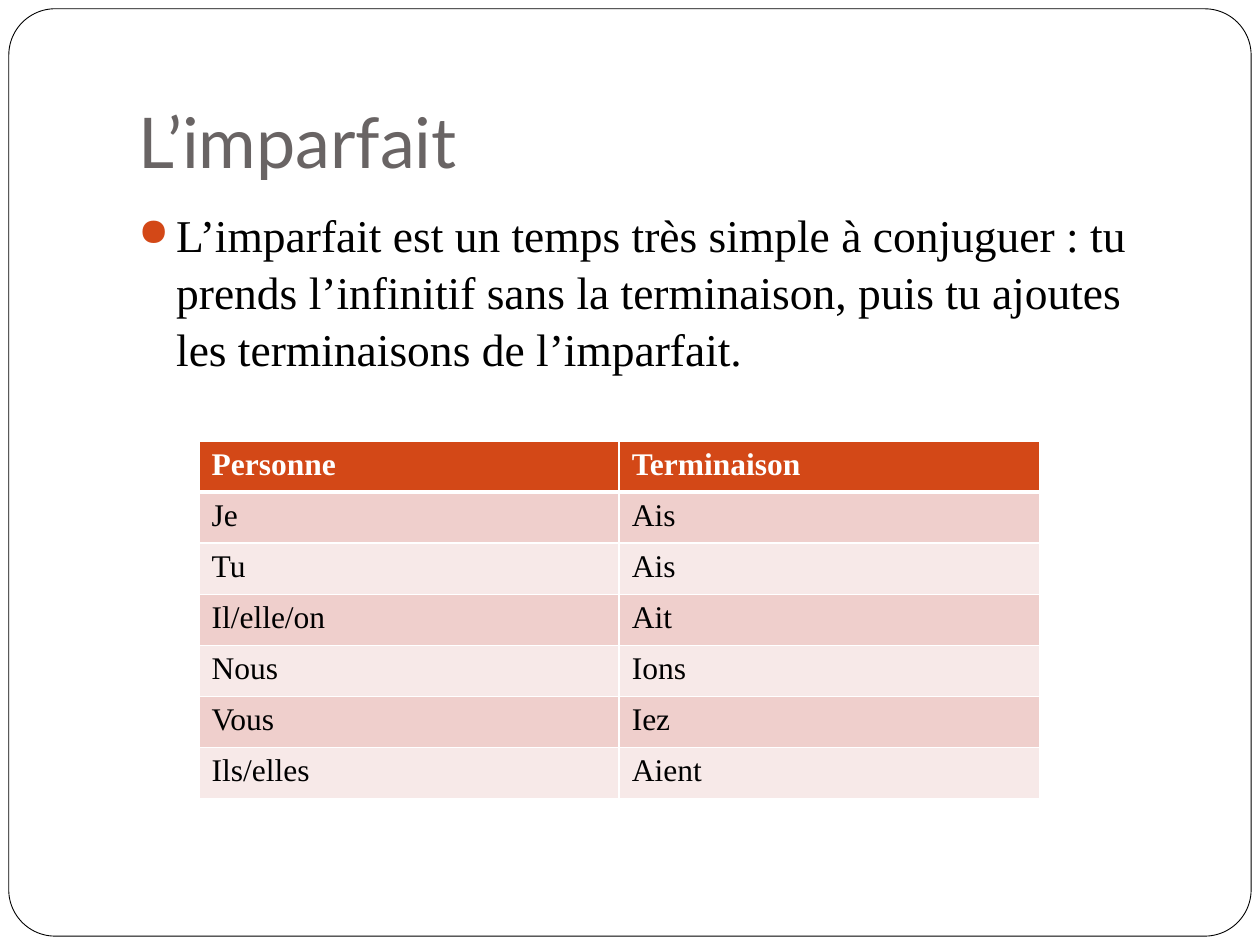
from lxml import etree
from pptx import Presentation, util as u
from pptx.dml.color import RGBColor
from pptx.enum import shapes, text
from pptx.oxml.ns import qn

WIDTH, HEIGHT = 10, 7.5
SERIF = "Times New Roman"
ACCENT, BLACK, WHITE = "D34817", "000000", "FFFFFF"
BANDS = ("EFCFCC", "F7E9E8")
ENDINGS = [
    ("Personne", "Terminaison"),
    ("Je", "Ais"),
    ("Tu", "Ais"),
    ("Il/elle/on", "Ait"),
    ("Nous", "Ions"),
    ("Vous", "Iez"),
    ("Ils/elles", "Aient"),
]


def rgb(hex_code):
    return RGBColor.from_string(hex_code)


def inches(*lengths):
    return [u.Inches(length) for length in lengths]


def add_run(paragraph, words, size, font, color, bold=False):
    run = paragraph.add_run()
    run.text = words
    run.font.size = u.Pt(size)
    run.font.name = font
    run.font.bold = bold
    run.font.color.rgb = rgb(color)


def add_frame(slide, margin):
    frame = slide.shapes.add_shape(
        shapes.MSO_SHAPE.ROUNDED_RECTANGLE,
        *inches(margin, margin, WIDTH - 2 * margin, HEIGHT - 2 * margin))
    frame.adjustments[0] = 0.05
    frame.shadow.inherit = False
    frame.fill.solid()
    frame.fill.fore_color.rgb = rgb(WHITE)
    frame.line.color.rgb = rgb(BLACK)
    frame.line.width = u.Pt(0.5)


def add_text_area(slide, top, height, anchor):
    area = slide.shapes.add_textbox(*inches(0.1 * WIDTH, top, 0.85 * WIDTH, height))
    area.text_frame.word_wrap = True
    area.text_frame.vertical_anchor = anchor
    return area.text_frame


def add_bullet(paragraph, char, color, percent, indent):
    props = paragraph._p.get_or_add_pPr()
    props.set("marL", str(u.Inches(indent)))
    props.set("indent", str(-u.Inches(indent)))
    bullet_color = etree.SubElement(props, qn("a:buClr"))
    etree.SubElement(bullet_color, qn("a:srgbClr"), val=color)
    etree.SubElement(props, qn("a:buSzPct"), val=str(percent * 1000))
    etree.SubElement(props, qn("a:buChar"), char=char)


def set_borders(cell, color, **widths):
    """Draw the sides named L, R, T and B, with widths in points."""
    props = cell._tc.get_or_add_tcPr()
    for position, (side, width) in enumerate(widths.items()):
        border = etree.Element(qn(f"a:ln{side}"), w=str(u.Pt(width)))
        fill = etree.SubElement(border, qn("a:solidFill"))
        etree.SubElement(fill, qn("a:srgbClr"), val=color)
        props.insert(position, border)


def add_endings_table(slide, rows):
    table = slide.shapes.add_table(
        len(rows), len(rows[0]), *inches(1.58, 3.5, 6.67, 2.84)).table
    for r, row in enumerate(rows):
        header = r == 0
        for c, words in enumerate(row):
            cell = table.cell(r, c)
            cell.fill.solid()
            cell.fill.fore_color.rgb = rgb(ACCENT if header else BANDS[(r - 1) % 2])
            set_borders(cell, WHITE, L=1, R=1, T=3 if r == 1 else 1, B=3 if header else 1)
            add_run(cell.text_frame.paragraphs[0], words, 18, SERIF,
                    WHITE if header else BLACK, header)


def main():
    deck = Presentation()
    deck.slide_width, deck.slide_height = inches(WIDTH, HEIGHT)
    slide = deck.slides.add_slide(deck.slide_layouts[6])

    add_frame(slide, 0.07)

    title = add_text_area(slide, 0.3, 1.25, text.MSO_ANCHOR.BOTTOM)
    title.margin_bottom = u.Inches(0.1)
    add_run(title.paragraphs[0], "L’imparfait", 40, "Lato", "696464")

    rule = add_text_area(slide, 1.58, 5, text.MSO_ANCHOR.TOP).paragraphs[0]
    rule.space_before = u.Pt(5.8)
    rule.line_spacing = 1.04
    add_bullet(rule, "●", ACCENT, 85, 0.3)
    add_run(rule, "L’imparfait est un temps très simple à conjuguer : tu prends "
            "l’infinitif sans la terminaison, puis tu ajoutes les terminaisons "
            "de l’imparfait.", 26, SERIF, BLACK)

    add_endings_table(slide, ENDINGS)
    deck.save("out.pptx")


if __name__ == "__main__":
    main()
